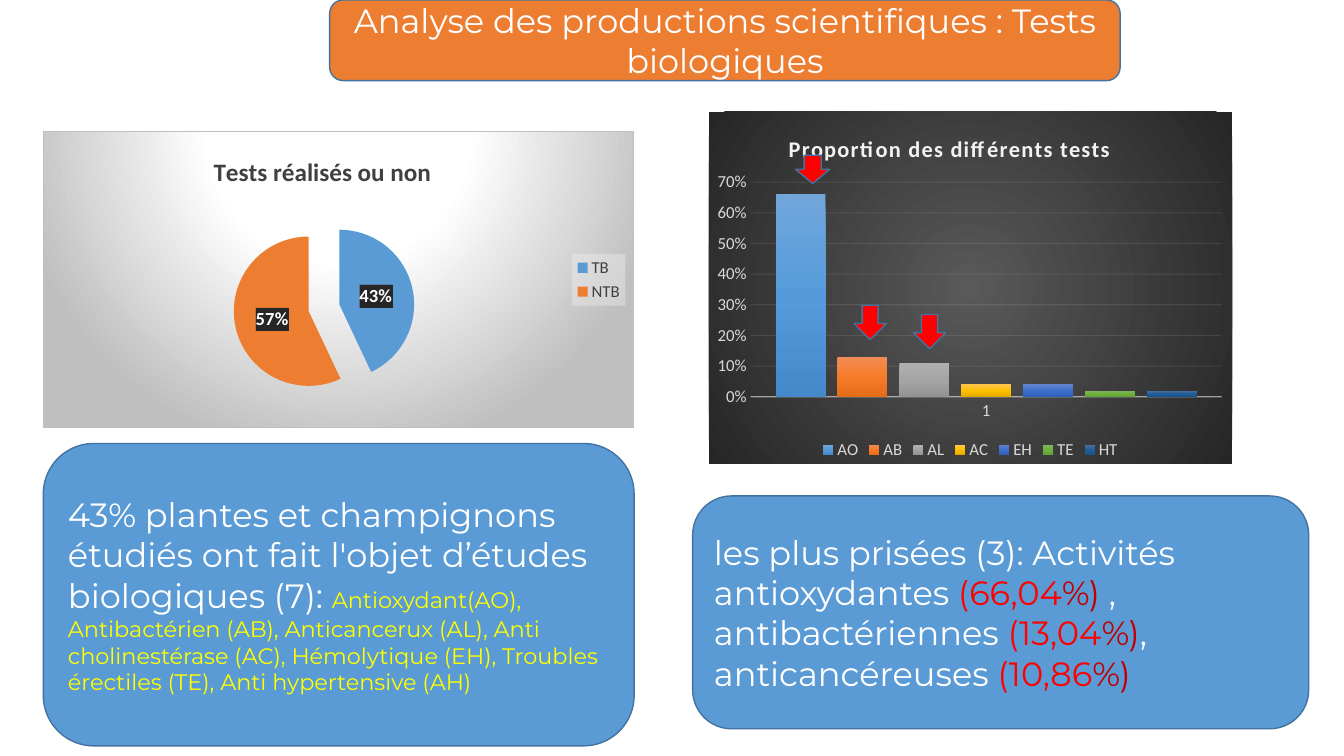
import pptx
import pptx.chart.data
import pptx.dml.color
import pptx.enum.chart
import pptx.enum.shapes
import pptx.enum.text
import pptx.oxml
import pptx.oxml.ns
import pptx.util

Inches, Pt = pptx.util.Inches, pptx.util.Pt
RGBColor = pptx.dml.color.RGBColor
qn = pptx.oxml.ns.qn
Legend = pptx.enum.chart.XL_LEGEND_POSITION
Shape = pptx.enum.shapes.MSO_SHAPE

WHITE = RGBColor(0xFF, 0xFF, 0xFF)
BLUE = RGBColor(0x5B, 0x9B, 0xD5)
ORANGE = RGBColor(0xED, 0x7D, 0x31)
OUTLINE = RGBColor(0x43, 0x73, 0x9E)
YELLOW = RGBColor(0xFF, 0xFF, 0x00)
RED = RGBColor(0xFF, 0x00, 0x00)
DARK_RED = RGBColor(0xC0, 0x00, 0x00)
CHARCOAL = RGBColor(0x26, 0x26, 0x26)
DARK_GREY = RGBColor(0x40, 0x40, 0x40)
MID_GREY = RGBColor(0x59, 0x59, 0x59)
SILVER = RGBColor(0xBF, 0xBF, 0xBF)
LIGHT_GREY = RGBColor(0xD9, 0xD9, 0xD9)
PALE_GREY = RGBColor(0xF2, 0xF2, 0xF2)

TESTS = [  # name, share, gradient from top to bottom
    ("AO", 0.66, (RGBColor(0x71, 0xA6, 0xDB), RGBColor(0x55, 0x9B, 0xDB), RGBColor(0x44, 0x8A, 0xCA))),
    ("AB", 0.13, (RGBColor(0xF1, 0x8C, 0x57), RGBColor(0xF6, 0x7B, 0x28), RGBColor(0xE5, 0x6C, 0x19))),
    ("AL", 0.11, (RGBColor(0xAF, 0xAF, 0xAF), RGBColor(0xA5, 0xA5, 0xA5), RGBColor(0x93, 0x93, 0x93))),
    ("AC", 0.04, (RGBColor(0xFF, 0xC6, 0x4B), RGBColor(0xFF, 0xC0, 0x00), RGBColor(0xE3, 0xAB, 0x00))),
    ("EH", 0.04, (RGBColor(0x61, 0x83, 0xCB), RGBColor(0x3E, 0x70, 0xCA), RGBColor(0x30, 0x62, 0xBB))),
    ("TE", 0.02, (RGBColor(0x81, 0xB8, 0x61), RGBColor(0x6F, 0xB2, 0x42), RGBColor(0x62, 0xA3, 0x36))),
    ("HT", 0.02, (RGBColor(0x51, 0x73, 0x9F), RGBColor(0x20, 0x5E, 0x97), RGBColor(0x17, 0x54, 0x8B))),
]


def xml(tag, content="", attributes=""):
    declarations = pptx.oxml.ns.nsdecls("c", "a")
    return pptx.oxml.parse_xml(f"<{tag} {declarations} {attributes}>{content}</{tag}>")


def gradient(stops, shade):
    marks = "".join(f'<a:gs pos="{percent * 1000}"><a:srgbClr val="{color}"/></a:gs>'
                    for percent, color in stops)
    return f'<a:gradFill rotWithShape="1"><a:gsLst>{marks}</a:gsLst>{shade}</a:gradFill>'


def circular(left, top, right, bottom):
    return (f'<a:path path="circle"><a:fillToRect l="{left * 1000}" t="{top * 1000}" '
            f'r="{right * 1000}" b="{bottom * 1000}"/></a:path>')


def set_font(font, **values):
    color = values.pop("color")
    for key, value in values.items():
        setattr(font, key, value)
    font.color.rgb = color


def set_line(line, color, width, opacity):
    line.color.rgb = color
    line.width = Pt(width)
    shade = next(line._get_or_add_ln().iter(qn("a:srgbClr")))
    shade.append(xml("a:alpha", attributes=f'val="{opacity * 1000}"'))


def set_layout(parent, index, inner=False, **fractions):
    """Place a chart part at fractions of the chart area."""
    for old in parent.findall(qn("c:layout")):
        parent.remove(old)
    target = '<c:layoutTarget val="inner"/>' if inner else ""
    modes = "".join(f'<c:{key}Mode val="edge"/>' for key in "xy")
    values = "".join(f'<c:{key} val="{value}"/>' for key, value in fractions.items())
    parent.insert(index, xml("c:layout", f"<c:manualLayout>{target}{modes}{values}</c:manualLayout>"))


def add_chart(slide, box, kind, data, title, title_at, title_font, plot_at, legend, text_color, area):
    """Add a chart with a title, a legend and a filled area."""
    chart = slide.shapes.add_chart(kind, *map(Inches, box), data).chart
    set_font(chart.font, name="Calibri", size=Pt(12), color=text_color)
    chart.has_title = True
    chart.chart_title.text_frame.text = title
    run = chart.chart_title.text_frame.paragraphs[0].runs[0]
    set_font(run.font, name="Calibri", bold=True, **title_font)
    set_layout(chart.chart_title._element, 1, x=title_at[0], y=title_at[1])
    space = chart._chartSpace
    set_layout(space.chart.plotArea, 0, True, **dict(zip("xywh", plot_at)))
    chart.has_legend = True
    chart.legend.position = legend
    chart.legend.include_in_layout = False
    set_font(chart.legend.font, name="Calibri", size=Pt(12), color=text_color)
    space.chart.addnext(xml("c:spPr", area))
    return chart, run


def add_share_pie(slide, box):
    data = pptx.chart.data.CategoryChartData()
    data.categories = ["TB", "NTB"]
    data.add_series("Series 1", [43, 57])
    border = f'<a:ln w="9525"><a:solidFill><a:srgbClr val="{SILVER}"/></a:solidFill></a:ln>'
    area = gradient([(0, WHITE), (39, WHITE), (100, SILVER)], circular(50, -80, 50, 180)) + border
    chart, _ = add_chart(
        slide, box, pptx.enum.chart.XL_CHART_TYPE.PIE, data, "Tests réalisés ou non",
        (0.28, 0.06), {"size": Pt(18), "color": DARK_GREY}, (0.32, 0.29, 0.31, 0.61),
        Legend.RIGHT, DARK_GREY, area)
    veil = f'<a:solidFill><a:srgbClr val="{PALE_GREY}"><a:alpha val="39000"/></a:srgbClr></a:solidFill>'
    chart.legend._element.find(qn("c:txPr")).addprevious(xml("c:spPr", veil))

    shares = chart.plots[0].series[0]
    for index, color in enumerate((BLUE, ORANGE)):
        fill = shares.points[index].format.fill
        fill.solid()
        fill.fore_color.rgb = color
    shares._element.find(qn("c:dPt")).addprevious(xml("c:explosion", attributes='val="21"'))
    labels = shares.data_labels
    for key, value in {"show_percentage": True, "show_value": False, "number_format": "0%",
                       "number_format_is_linked": False,
                       "position": pptx.enum.chart.XL_LABEL_POSITION.CENTER}.items():
        setattr(labels, key, value)
    set_font(labels.font, name="Calibri", size=Pt(13.3), bold=True, color=WHITE)
    stripes = (f'<a:pattFill prst="dkVert"><a:fgClr><a:srgbClr val="{CHARCOAL}"/></a:fgClr>'
               f'<a:bgClr><a:srgbClr val="{MID_GREY}"/></a:bgClr></a:pattFill>')
    labels._element.find(qn("c:numFmt")).addnext(xml("c:spPr", stripes))


def add_test_columns(slide, box):
    data = pptx.chart.data.CategoryChartData(number_format="0%")
    data.categories = ["1"]
    for name, share, _ in TESTS:
        data.add_series(name, [share])
    area = gradient([(0, MID_GREY), (100, CHARCOAL)], circular(50, 50, 50, 50)) + "<a:ln><a:noFill/></a:ln>"
    chart, title = add_chart(
        slide, box, pptx.enum.chart.XL_CHART_TYPE.COLUMN_CLUSTERED, data,
        "Proportion des différents tests", (0.145, 0.05), {"size": Pt(16), "color": PALE_GREY},
        (0.08, 0.2, 0.9, 0.61), Legend.BOTTOM, LIGHT_GREY, area)
    title.font._element.set("spc", "100")
    plot = chart.plots[0]
    plot.vary_by_categories = False
    plot.gap_width, plot.overlap = 100, -24
    for series, (_, _, colors) in zip(plot.series, TESTS):
        shade = gradient(zip((0, 50, 100), colors), '<a:lin ang="5400000" scaled="0"/>')
        series._element.get_or_add_spPr().append(xml("c:wrap", shade)[0])
    for axis in (chart.category_axis, chart.value_axis):
        axis.major_tick_mark = axis.minor_tick_mark = pptx.enum.chart.XL_TICK_MARK.NONE
        set_font(axis.tick_labels.font, name="Calibri", size=Pt(12), color=LIGHT_GREY)
    set_line(chart.category_axis.format.line, PALE_GREY, 1, 54)
    shares = chart.value_axis
    shares.minimum_scale, shares.maximum_scale, shares.major_unit = 0, 0.7, 0.1
    shares.tick_labels.number_format = "0%"
    shares.tick_labels.number_format_is_linked = False
    shares.format.line.fill.background()
    set_line(shares.major_gridlines.format.line, PALE_GREY, 0.75, 10)


def add_panel(slide, box, kind, color, texts=(), align=pptx.enum.text.PP_ALIGN.LEFT):
    """Add an outlined shape; texts are (text, size, colour)."""
    panel = slide.shapes.add_shape(kind, *map(Inches, box))
    panel.shadow.inherit = False
    panel.fill.solid()
    panel.fill.fore_color.rgb = color
    panel.line.color.rgb = OUTLINE
    panel.line.width = Pt(1)
    panel.text_frame.word_wrap = True
    panel.text_frame.vertical_anchor = pptx.enum.text.MSO_ANCHOR.MIDDLE
    paragraph = panel.text_frame.paragraphs[0]
    paragraph.alignment = align
    for text, size, text_color in texts:
        run = paragraph.add_run()
        run.text = text
        set_font(run.font, name="Montserrat", size=Pt(size), color=text_color)


def main():
    deck = pptx.Presentation()
    deck.slide_width, deck.slide_height = Inches(13.33), Inches(7.5)
    slide = deck.slides.add_slide(deck.slide_layouts[6])
    rounded = Shape.ROUNDED_RECTANGLE

    add_share_pie(slide, (0.43, 1.3, 5.86, 2.95))
    add_panel(slide, (0.43, 4.4, 5.86, 3), rounded, BLUE, [
        ("43% plantes et champignons étudiés ont fait l'objet d’études biologiques (7): ", 24, WHITE),
        ("Antioxydant(AO), Antibactérien (AB), Anticancerux (AL), Anti cholinestérase (AC), "
         "Hémolytique (EH), Troubles érectiles (TE), Anti hypertensive (AH)", 16, YELLOW)])
    add_panel(slide, (3.27, 0, 7.84, 0.8), rounded, ORANGE,
              [("Analyse des productions scientifiques : Tests biologiques", 24, WHITE)],
              pptx.enum.text.PP_ALIGN.CENTER)
    add_test_columns(slide, (7.03, 1.11, 5.19, 3.49))
    favourites = [("les plus prisées (3): Activités antioxydantes ", "(66,04", "%) "),
                  (", antibactériennes ", "(13,04", "%)"),
                  (", anticancéreuses ", "(10,86", "%)")]
    add_panel(slide, (6.87, 4.92, 6.11, 2.31), rounded, BLUE, [
        (text, 24, color) for favourite in favourites
        for text, color in zip(favourite, (WHITE, RED, DARK_RED))])
    for arrow_box in ((7.89, 1.54, 0.34, 0.28), (8.47, 3.03, 0.32, 0.34), (9.06, 3.12, 0.32, 0.34)):
        add_panel(slide, arrow_box, Shape.DOWN_ARROW, RED)
    deck.save("out.pptx")


if __name__ == "__main__":
    main()
